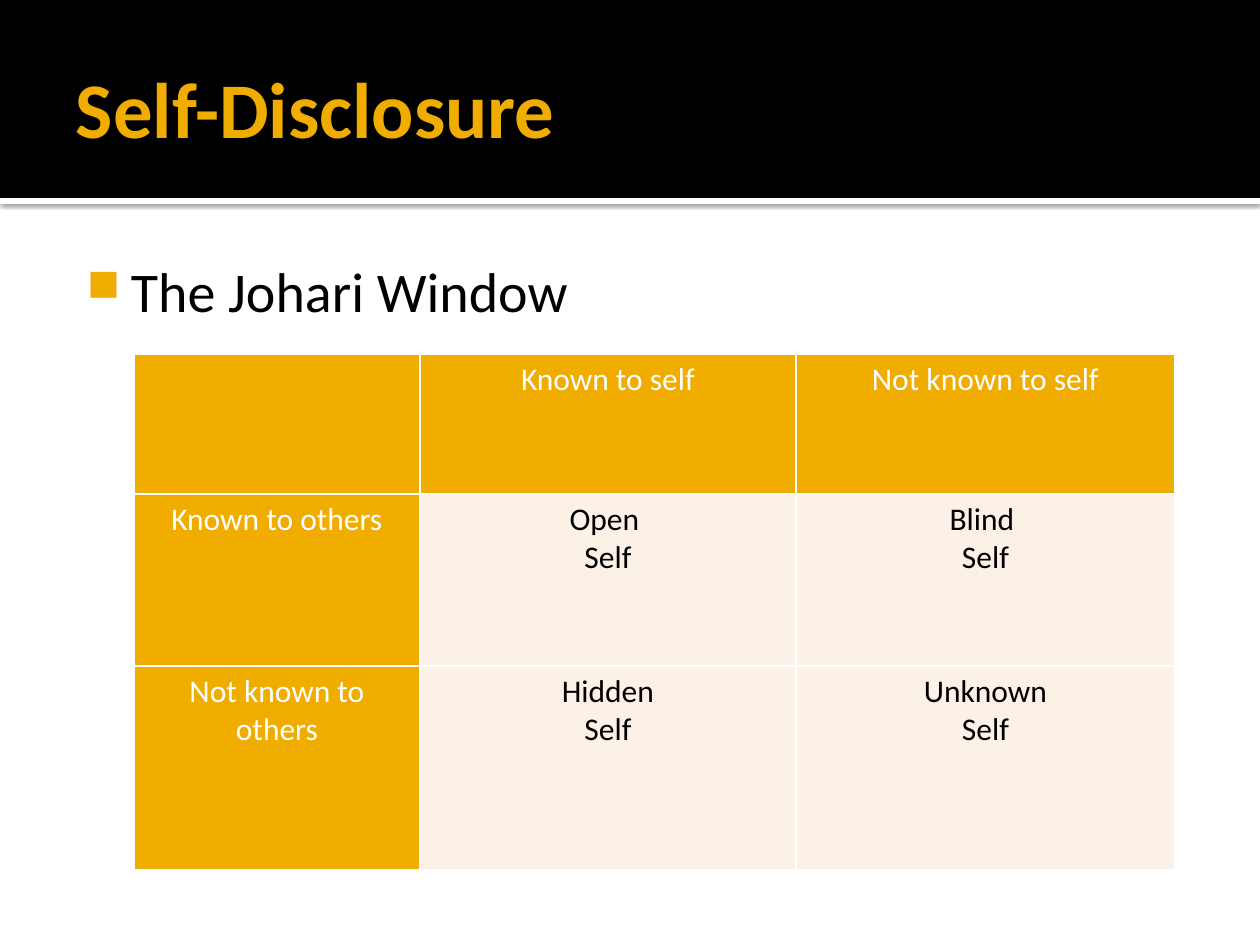
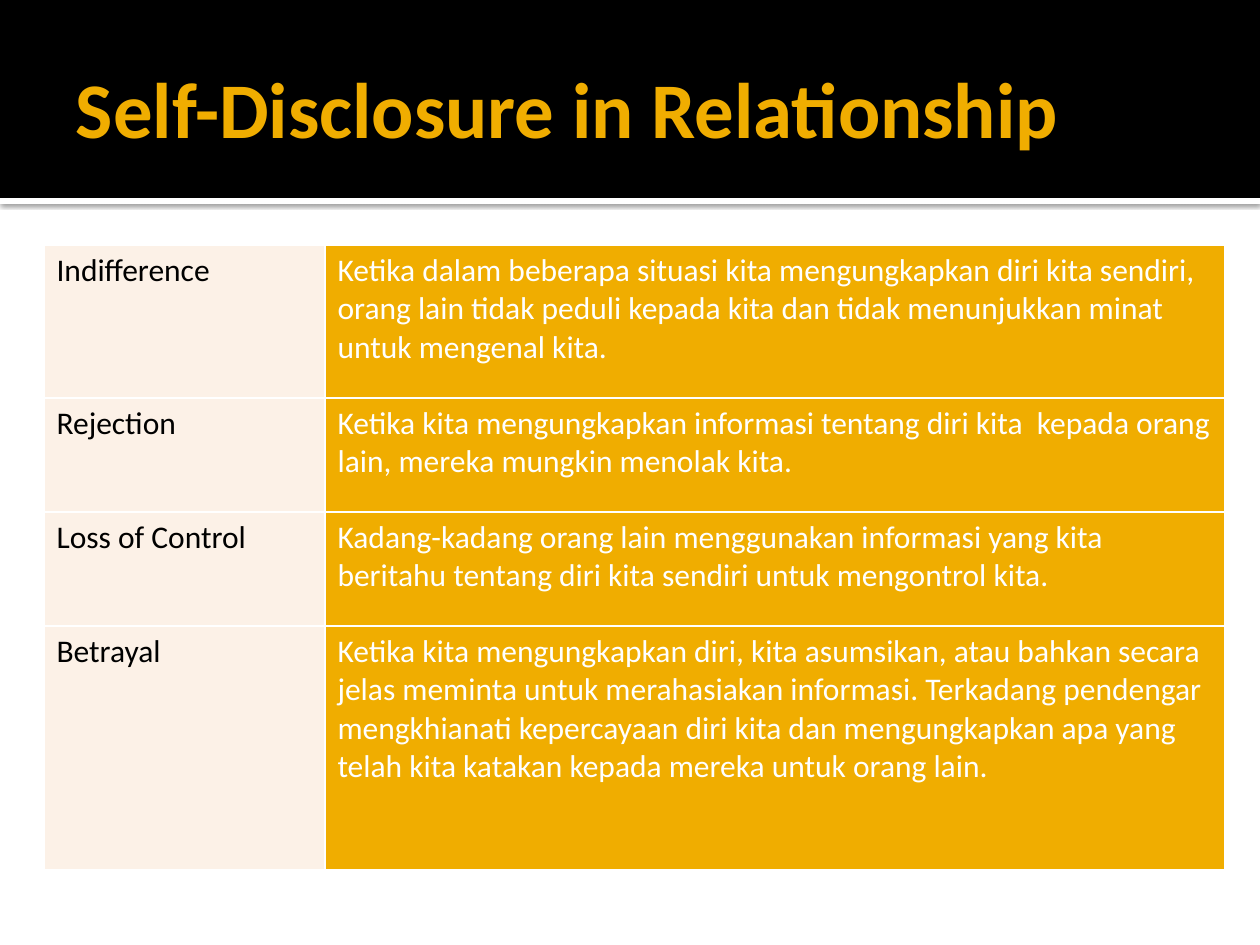
"""Build two slides on self-disclosure, each with a banded title and a table."""
from lxml import etree
from pptx import Presentation
from pptx import util as u
from pptx.dml.color import RGBColor
from pptx.enum import shapes, text
from pptx.oxml import parse_xml
from pptx.oxml.ns import nsdecls, qn

AMBER = RGBColor(0xF0, 0xAD, 0x00)
CREAM = RGBColor(0xFC, 0xF1, 0xE7)
BLACK = RGBColor(0, 0, 0)
WHITE = RGBColor(0xFF, 0xFF, 0xFF)
TEXT_ON = {AMBER: WHITE, CREAM: BLACK}
FONT = "Calibri"
PX_PER_INCH = 126
SLIDE_WIDTH, SLIDE_HEIGHT = 1260, 945
BAND_HEIGHT, STRIP_HEIGHT = 198, 6
TITLE_BOX = (63, 21, 1134, 173)
BODY_BOX = (63, 244, 1134, 89)

SLIDES = [
    {
        "title": "Self-Disclosure",
        "bullet": "The Johari Window",
        "origin": (134, 354),
        "columns": [286, 376, 379],
        "heights": [140, 172, 204],
        "align": text.PP_ALIGN.CENTER,
        "fills": [[AMBER] * 3, [AMBER, CREAM, CREAM], [AMBER, CREAM, CREAM]],
        "rows": [
            ["", "Known to self", "Not known to self"],
            ["Known to others", "Open \nSelf", "Blind \nSelf"],
            ["Not known to others", "Hidden\nSelf", "Unknown\nSelf"],
        ],
    },
    {
        "title": "Self-Disclosure in Relationship",
        "bullet": None,
        "origin": (44, 245),
        "columns": [281, 900],
        "heights": [153, 114, 114, 244],
        "align": text.PP_ALIGN.LEFT,
        "fills": [[CREAM, AMBER]] * 4,
        "rows": [
            ["Indifference",
             "Ketika dalam beberapa situasi kita mengungkapkan diri kita sendiri, "
             "orang lain tidak peduli kepada kita dan tidak menunjukkan minat "
             "untuk mengenal kita."],
            ["Rejection",
             "Ketika kita mengungkapkan informasi tentang diri kita  kepada orang "
             "lain, mereka mungkin menolak kita."],
            ["Loss of Control",
             "Kadang-kadang orang lain menggunakan informasi yang kita beritahu "
             "tentang diri kita sendiri untuk mengontrol kita."],
            ["Betrayal",
             "Ketika kita mengungkapkan diri, kita asumsikan, atau bahkan secara "
             "jelas meminta untuk merahasiakan informasi. Terkadang pendengar "
             "mengkhianati kepercayaan diri kita dan mengungkapkan apa yang telah "
             "kita katakan kepada mereka untuk orang lain."],
        ],
    },
]


def px(length):
    return u.Emu(round(length * 914400 / PX_PER_INCH))


def style_text(frame, size, color, bold=False, align=text.PP_ALIGN.LEFT):
    for paragraph in frame.paragraphs:
        paragraph.alignment = align
        for run in paragraph.runs:
            run.font.name = FONT
            run.font.size = u.Pt(size)
            run.font.bold = bold
            run.font.color.rgb = color


def add_band(slide, top, height, color):
    band = slide.shapes.add_shape(
        shapes.MSO_SHAPE.RECTANGLE, 0, px(top), px(SLIDE_WIDTH), px(height))
    band.fill.solid()
    band.fill.fore_color.rgb = color
    band.line.fill.background()
    band.shadow.inherit = False
    return band


def add_shadow(shape):
    effects = shape.element.spPr.find(qn("a:effectLst"))
    effects.append(parse_xml(
        f'<a:outerShdw {nsdecls("a")} blurRad="{u.Pt(2.5)}" dist="{u.Pt(0.8)}" '
        f'dir="5400000" algn="tl" rotWithShape="0"><a:srgbClr val="{BLACK}">'
        '<a:alpha val="60000"/></a:srgbClr></a:outerShdw>'))


def add_text(slide, box, insets, content):
    frame = slide.shapes.add_textbox(*map(px, box)).text_frame
    frame.word_wrap = True
    (frame.margin_left, frame.margin_top,
     frame.margin_right, frame.margin_bottom) = map(px, insets)
    frame.text = content
    return frame


def add_title(slide, title):
    add_shadow(add_band(slide, BAND_HEIGHT, STRIP_HEIGHT, WHITE))
    add_band(slide, 0, BAND_HEIGHT, BLACK)
    frame = add_text(slide, TITLE_BOX, (13, 6, 6, 6), title)
    frame.vertical_anchor = text.MSO_ANCHOR.MIDDLE
    style_text(frame, 45, AMBER, bold=True)


def add_bullet(slide, content):
    frame = add_text(slide, BODY_BOX, (8, 13, 13, 6), content)
    style_text(frame, 32, BLACK)
    properties = frame.paragraphs[0].runs[0].font and frame.paragraphs[0]._p.get_or_add_pPr()
    properties.set("marL", str(px(60)))
    properties.set("indent", str(px(-44)))
    color = etree.SubElement(properties, qn("a:buClr"))
    etree.SubElement(color, qn("a:srgbClr"), val=str(AMBER))
    etree.SubElement(properties, qn("a:buSzPct"), val="80000")
    etree.SubElement(properties, qn("a:buChar"), char="■")


def add_borders(cell):
    properties = cell._tc.get_or_add_tcPr()
    for side in ("lnL", "lnR", "lnT", "lnB"):
        line = etree.SubElement(properties, qn(f"a:{side}"), w=str(u.Pt(1)))
        fill = etree.SubElement(line, qn("a:solidFill"))
        etree.SubElement(fill, qn("a:srgbClr"), val=str(WHITE))


def add_grid(slide, content):
    columns, heights = content["columns"], content["heights"]
    box = (*content["origin"], sum(columns), sum(heights))
    table = slide.shapes.add_table(len(heights), len(columns), *map(px, box)).table
    table.first_row = table.horz_banding = False
    for column, width in zip(table.columns, columns):
        column.width = px(width)
    for row, height, words, fills in zip(
            table.rows, heights, content["rows"], content["fills"]):
        row.height = px(height)
        for cell, word, fill in zip(row.cells, words, fills):
            cell.text_frame.text = word
            style_text(cell.text_frame, 18, TEXT_ON[fill], align=content["align"])
            add_borders(cell)
            cell.fill.solid()
            cell.fill.fore_color.rgb = fill


def main():
    presentation = Presentation()
    presentation.slide_width = px(SLIDE_WIDTH)
    presentation.slide_height = px(SLIDE_HEIGHT)
    for content in SLIDES:
        slide = presentation.slides.add_slide(presentation.slide_layouts[6])
        add_title(slide, content["title"])
        if content["bullet"]:
            add_bullet(slide, content["bullet"])
        add_grid(slide, content)
    presentation.save("out.pptx")


if __name__ == "__main__":
    main()
